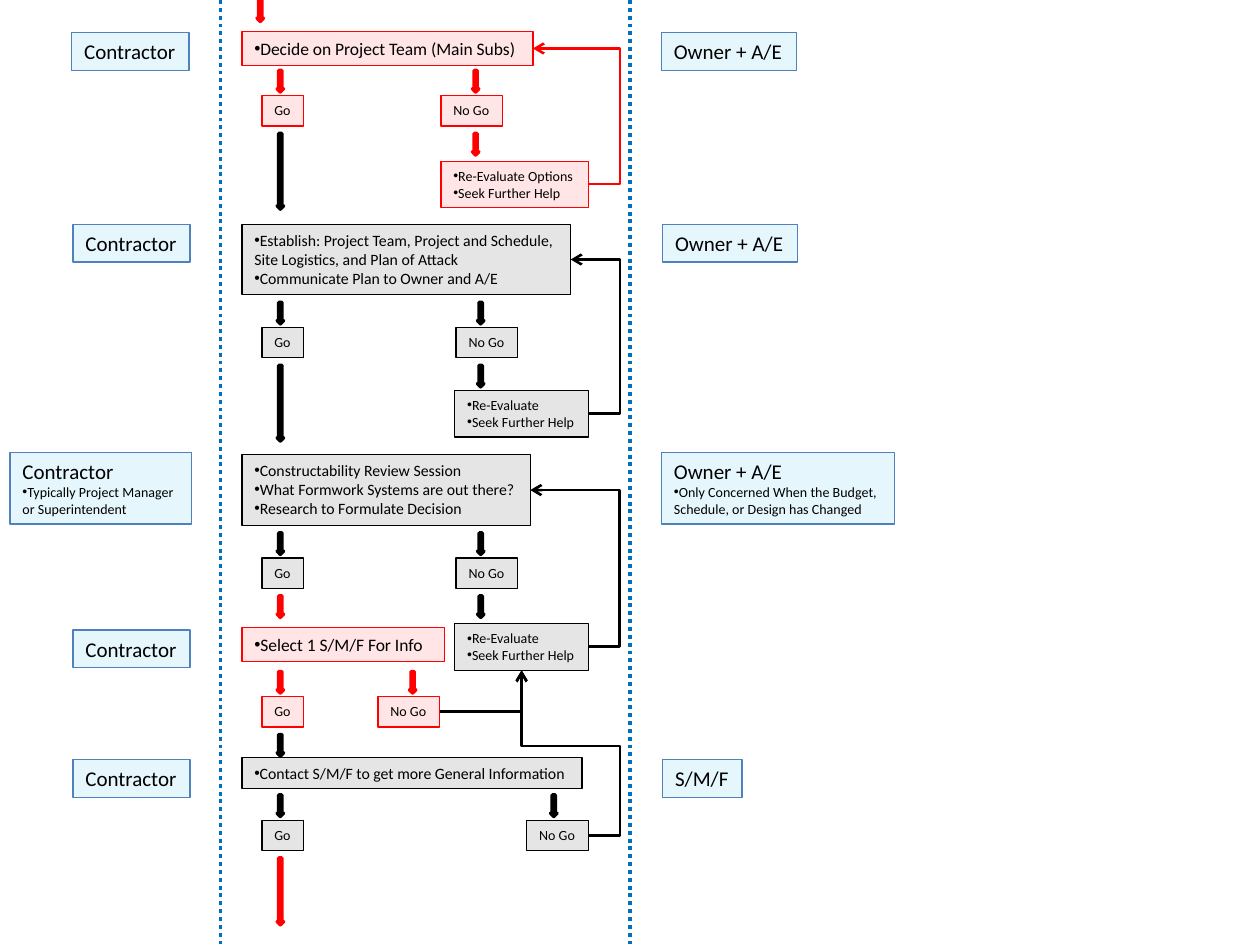
from lxml.etree import SubElement
from pptx import Presentation
from pptx.dml.color import RGBColor
from pptx.enum.dml import MSO_LINE
from pptx.enum.shapes import MSO_CONNECTOR, MSO_SHAPE
from pptx.enum.text import MSO_AUTO_SIZE
from pptx.oxml.ns import qn
from pptx.util import Inches, Pt

COLOURS = {"red": "FF0000", "black": "000000", "sky": "00B0F0",
           "steel": "4F81BD", "divider": "0070C0"}
FONT, BULLET_FONT = "Calibri", "Arial"
BULLET = "•"
FLOW_LEFT = 1.92
GO_LEFT, GO_ARROW_LEFT = 2.08, 2.2
RETRY_RIGHT, RETURN_LANE = 4.67, 4.92
CHIP_HEIGHT, SHORT_ARROW, LONG_ARROW = 0.24, 0.17, 0.6

# box: left, top, width, height; drop: gap from box bottom to the Go / No Go row
# retry: left, gap from the top of that row, lines
STAGES = [
    dict(box=(FLOW_LEFT, 0.25, 2.31, 0.27), colour="red", size=10, drop=0.24,
         lines=["•Decide on Project Team (Main Subs)"],
         no_go=3.5, no_go_arrow=3.75, next_arrow=("black", LONG_ARROW),
         retry=(3.5, 0.52, ["•Re-Evaluate Options", "•Seek Further Help"])),
    dict(box=(FLOW_LEFT, 1.78, 2.61, 0.56), colour="black", size=9, drop=0.26,
         lines=["•Establish: Project Team, Project and Schedule,",
                "Site Logistics, and Plan of Attack",
                "•Communicate Plan to Owner and A/E"],
         no_go=3.62, no_go_arrow=3.79, next_arrow=("black", LONG_ARROW),
         retry=(3.61, 0.5, ["•Re-Evaluate", "•Seek Further Help"])),
    dict(box=(FLOW_LEFT, 3.61, 2.29, 0.56), colour="black", size=9, drop=0.26,
         lines=["•Constructability Review Session",
                "•What Formwork Systems are out there?",
                "•Research to Formulate Decision"],
         no_go=3.62, no_go_arrow=3.79, next_arrow=("red", SHORT_ARROW),
         retry=(3.61, 0.52, ["•Re-Evaluate", "•Seek Further Help"])),
    dict(box=(FLOW_LEFT, 4.98, 1.61, 0.27), colour="red", size=10, drop=0.28,
         lines=["•Select 1 S/M/F For Info"],
         no_go=3, no_go_arrow=3.25, next_arrow=("black", SHORT_ARROW)),
    dict(box=(FLOW_LEFT, 6.01, 2.7, 0.25), colour="black", size=9, drop=0.25,
         lines=["•Contact S/M/F to get more General Information"],
         no_go=4.18, no_go_arrow=4.37, next_arrow=("red", 0.53)),
]

ROLES = [
    ((0.57, 0.26, 0.93, 0.3), ["Contractor"]),
    ((5.25, 0.26, 1.07, 0.3), ["Owner + A/E"]),
    ((0.58, 1.78, 0.93, 0.3), ["Contractor"]),
    ((5.26, 1.78, 1.07, 0.3), ["Owner + A/E"]),
    ((0.08, 3.59, 1.44, 0.57),
     ["Contractor", "•Typically Project Manager", "or Superintendent"]),
    ((5.25, 3.59, 1.85, 0.57),
     ["Owner + A/E", "•Only Concerned When the Budget,", "Schedule, or Design has Changed"]),
    ((0.58, 5, 0.93, 0.3), ["Contractor"]),
    ((0.58, 6.03, 0.93, 0.3), ["Contractor"]),
    ((5.26, 6.03, 0.63, 0.3), ["S/M/F"]),
]


def rgb(name):
    return RGBColor.from_string(COLOURS[name])


def add_text_line(para, text, size):
    """Write one line; a leading bullet sign becomes a real paragraph bullet."""
    if text.startswith(BULLET):
        properties = para._p.get_or_add_pPr()
        SubElement(properties, qn("a:buFont"), typeface=BULLET_FONT)
        SubElement(properties, qn("a:buChar"), char=BULLET)
    span = para.add_run()
    span.text = text.removeprefix(BULLET)
    for name, value in {"name": FONT, "size": Pt(size)}.items():
        setattr(span.font, name, value)
    span.font.color.rgb = rgb("black")


def add_box(page, box, lines, sizes, fill, outline):
    """Add a text box with a 10 % tint; sizes holds one point size per line."""
    shape = page.shapes.add_textbox(*map(Inches, box))
    shape.fill.solid()
    shape.fill.fore_color.rgb = rgb(fill)
    colour = shape.fill._xPr.find(qn("a:solidFill"))[0]
    SubElement(colour, qn("a:alpha"), val="10000")
    shape.line.color.rgb = rgb(outline)
    shape.line.width = Pt(0.75)
    frame = shape.text_frame
    frame.word_wrap = False
    frame.auto_size = MSO_AUTO_SIZE.SHAPE_TO_FIT_TEXT
    for index, (text, size) in enumerate(zip(lines, sizes)):
        para = frame.add_paragraph() if index else frame.paragraphs[0]
        add_text_line(para, text, size)


def add_down_arrow(page, left, top, colour, height=SHORT_ARROW):
    arrow = page.shapes.add_shape(
        MSO_SHAPE.DOWN_ARROW, *map(Inches, (left, top, 0.05, height)))
    arrow.shadow.inherit = False
    arrow.fill.solid()
    arrow.fill.fore_color.rgb = rgb(colour)
    arrow.line.color.rgb = rgb(colour)
    arrow.line.width = Pt(2)


def add_line(page, start, end, colour, width, kind=MSO_CONNECTOR.STRAIGHT):
    line = page.shapes.add_connector(kind, *map(Inches, (*start, *end)))
    line.line.color.rgb = rgb(colour)
    line.line.width = Pt(width)
    SubElement(line._element.spPr, qn("a:effectLst"))
    return line


def add_return_path(page, start, end, colour, lane=None, turn=None):
    """Bent arrow; lane is the x of its first upright run, turn the y of a second bend."""
    path = add_line(page, start, end, colour, 1.5, MSO_CONNECTOR.ELBOW)
    SubElement(path.line._get_or_add_ln(), qn("a:tailEnd"), type="arrow")
    bends = [(at - start[axis]) / (end[axis] - start[axis])
             for axis, at in enumerate((lane, turn)) if at is not None]
    geometry = path._element.spPr.find(qn("a:prstGeom"))
    geometry.set("prst", f"bentConnector{2 + len(bends)}")
    guides = geometry.find(qn("a:avLst"))
    for number, bend in enumerate(bends, 1):
        SubElement(guides, qn("a:gd"), name=f"adj{number}",
                   fmla=f"val {round(bend * 100000)}")


def add_stage(page, box, colour, size, lines, drop, no_go, no_go_arrow,
              next_arrow, retry=None):
    """One decision step: its box, the Go / No Go row and the way back."""
    left, top, width, height = box
    add_box(page, box, lines, [size] * len(lines), colour, colour)
    row = top + height + drop
    below = row + 0.3
    for label, chip_left, chip_width, arrow_left in (
            ("Go", GO_LEFT, 0.33, GO_ARROW_LEFT),
            ("No Go", no_go, 0.49, no_go_arrow)):
        add_down_arrow(page, arrow_left, row - 0.2, colour)
        add_box(page, (chip_left, row, chip_width, CHIP_HEIGHT),
                [label], [8], colour, colour)
    next_colour, next_height = next_arrow
    add_down_arrow(page, GO_ARROW_LEFT, below, next_colour, next_height)
    if retry:
        retry_left, retry_drop, retry_lines = retry
        retry_top = row + retry_drop
        add_down_arrow(page, no_go_arrow, below, colour)
        add_box(page, (retry_left, retry_top, RETRY_RIGHT - retry_left, 0.37),
                retry_lines, [8] * len(retry_lines), colour, colour)
        add_return_path(page, (RETRY_RIGHT, retry_top + 0.18),
                        (left + width, top + height / 2), colour, RETURN_LANE)


def add_role(page, box, lines):
    add_box(page, box, lines, [12] + [8] * (len(lines) - 1), "sky", "steel")


def add_dividers(page, height):
    for x in (1.75, 5):
        divider = add_line(page, (x, 0), (x, height), "divider", 2.25)
        divider.line.dash_style = MSO_LINE.ROUND_DOT


def main():
    deck = Presentation()
    deck.slide_width, deck.slide_height = Inches(10), Inches(7.5)
    page = deck.slides.add_slide(deck.slide_layouts[6])
    add_dividers(page, 7.5)
    add_down_arrow(page, 2.04, 0, "red")
    for stage in STAGES:
        add_stage(page, **stage)
    retry_entry = (4.14, 5.32)
    add_return_path(page, (3.49, 5.65), retry_entry, "black")
    add_return_path(page, (RETRY_RIGHT, 6.63), retry_entry, "black", RETURN_LANE, 5.92)
    for box, lines in ROLES:
        add_role(page, box, lines)
    deck.save("out.pptx")


if __name__ == "__main__":
    main()
